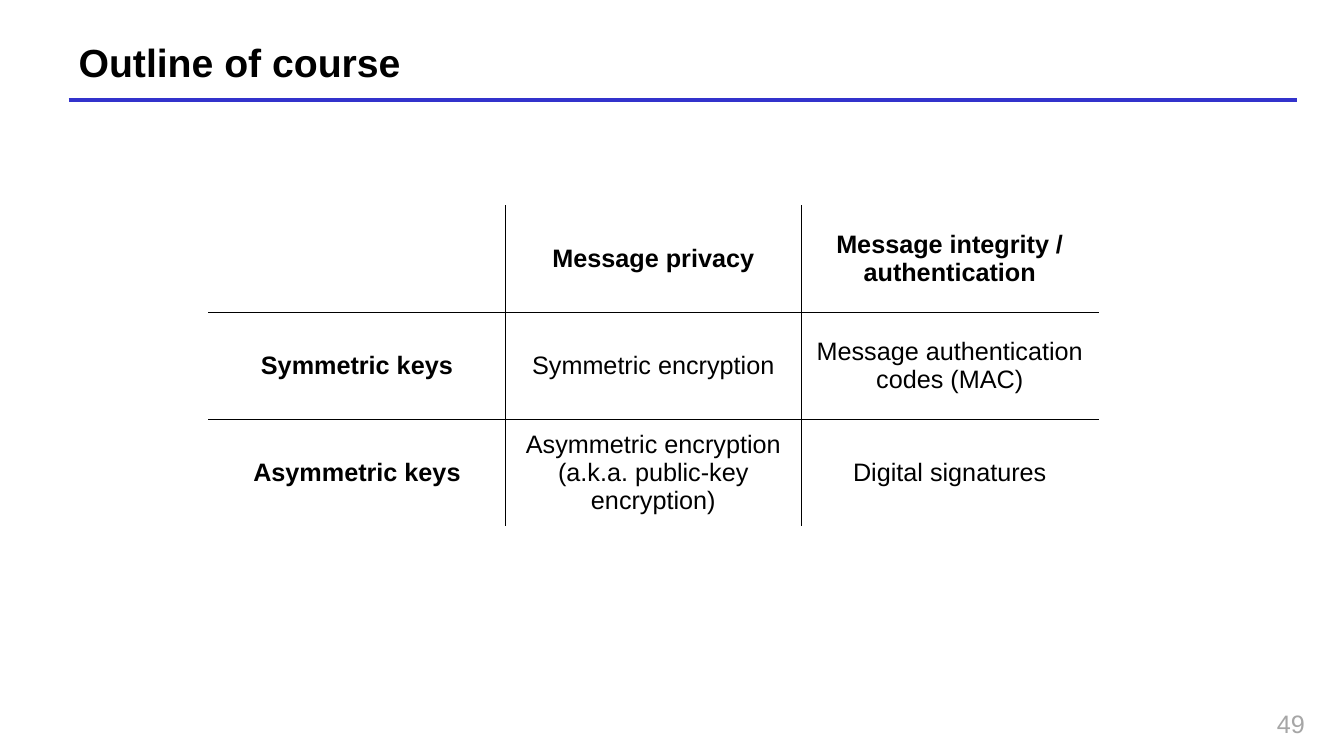
from lxml import etree
from pptx import Presentation
from pptx.dml.color import RGBColor
from pptx.enum.shapes import MSO_CONNECTOR
from pptx.enum.text import MSO_ANCHOR, PP_ALIGN
from pptx.oxml.ns import qn
from pptx.util import Inches, Pt

STRAIGHT = MSO_CONNECTOR.STRAIGHT
MIDDLE = MSO_ANCHOR.MIDDLE
LEFT, CENTER, RIGHT = PP_ALIGN.LEFT, PP_ALIGN.CENTER, PP_ALIGN.RIGHT

BLACK = RGBColor(0x00, 0x00, 0x00)
GRAY = RGBColor(0xA6, 0xA6, 0xA6)
BLUE = RGBColor(0x33, 0x33, 0xCC)

MARGIN, CONTENT_W = 0.68, 12.18
RULE_Y = 0.99
COL_W, ROW_H = 2.943, 1.06
COL_W = round(COL_W, 2)

ROWS = [
    ["", "Message privacy", "Message integrity / authentication"],
    ["Symmetric keys", "Symmetric encryption", "Message authentication codes (MAC)"],
    ["Asymmetric keys", "Asymmetric encryption (a.k.a. public-key encryption)", "Digital signatures"],
]


def write(tf, text, size, color=BLACK, bold=False, align=LEFT):
    p = tf.paragraphs[0]
    p.alignment = align
    r = p.add_run()
    r.text = text
    for name, value in {"name": "Arial", "size": Pt(size), "bold": bold}.items():
        setattr(r.font, name, value)
    r.font.color.rgb = color


def add_border(cell, side):
    ln = etree.SubElement(cell._tc.get_or_add_tcPr(), qn(f"a:ln{side}"), w=str(Pt(1)))
    fill = etree.SubElement(ln, qn("a:solidFill"))
    etree.SubElement(fill, qn("a:srgbClr"), val=str(BLACK))


prs = Presentation()
prs.slide_width, prs.slide_height = Inches(13.33), Inches(7.5)
s = prs.slides.add_slide(prs.slide_layouts[5])

rule = s.shapes.add_connector(
    STRAIGHT, Inches(MARGIN), Inches(RULE_Y), Inches(MARGIN + CONTENT_W), Inches(RULE_Y)
)
rule.line.color.rgb = BLUE
rule.line.width = Pt(3)
etree.SubElement(rule._element.spPr, qn("a:effectLst"))

title = s.shapes.title
title.left, title.top = Inches(MARGIN), Inches(0.36)
title.width, title.height = Inches(CONTENT_W), Inches(0.5)
title.text_frame.vertical_anchor = MIDDLE
write(title.text_frame, "Outline of course", 28, bold=True)

number = s.shapes.add_textbox(Inches(10.26), Inches(6.98), Inches(2.78), Inches(0.36))
number.text_frame.word_wrap = True
write(number.text_frame, "49", 18, GRAY, align=RIGHT)

n = len(ROWS)
table = s.shapes.add_table(
    n, n, Inches(2.07), Inches(2.04), Inches(n * COL_W), Inches(n * ROW_H)
).table
table.first_row = table.horz_banding = False

for i, row in enumerate(ROWS):
    for j, text in enumerate(row):
        cell = table.cell(i, j)
        inner = {"L": j > 0, "R": j < n - 1, "T": i > 0, "B": i < n - 1}
        for side, shown in inner.items():
            if shown:
                add_border(cell, side)
        cell.fill.background()
        cell.vertical_anchor = MIDDLE
        if text:
            write(cell.text_frame, text, 18, bold=i == 0 or j == 0, align=CENTER)

prs.save("out.pptx")
